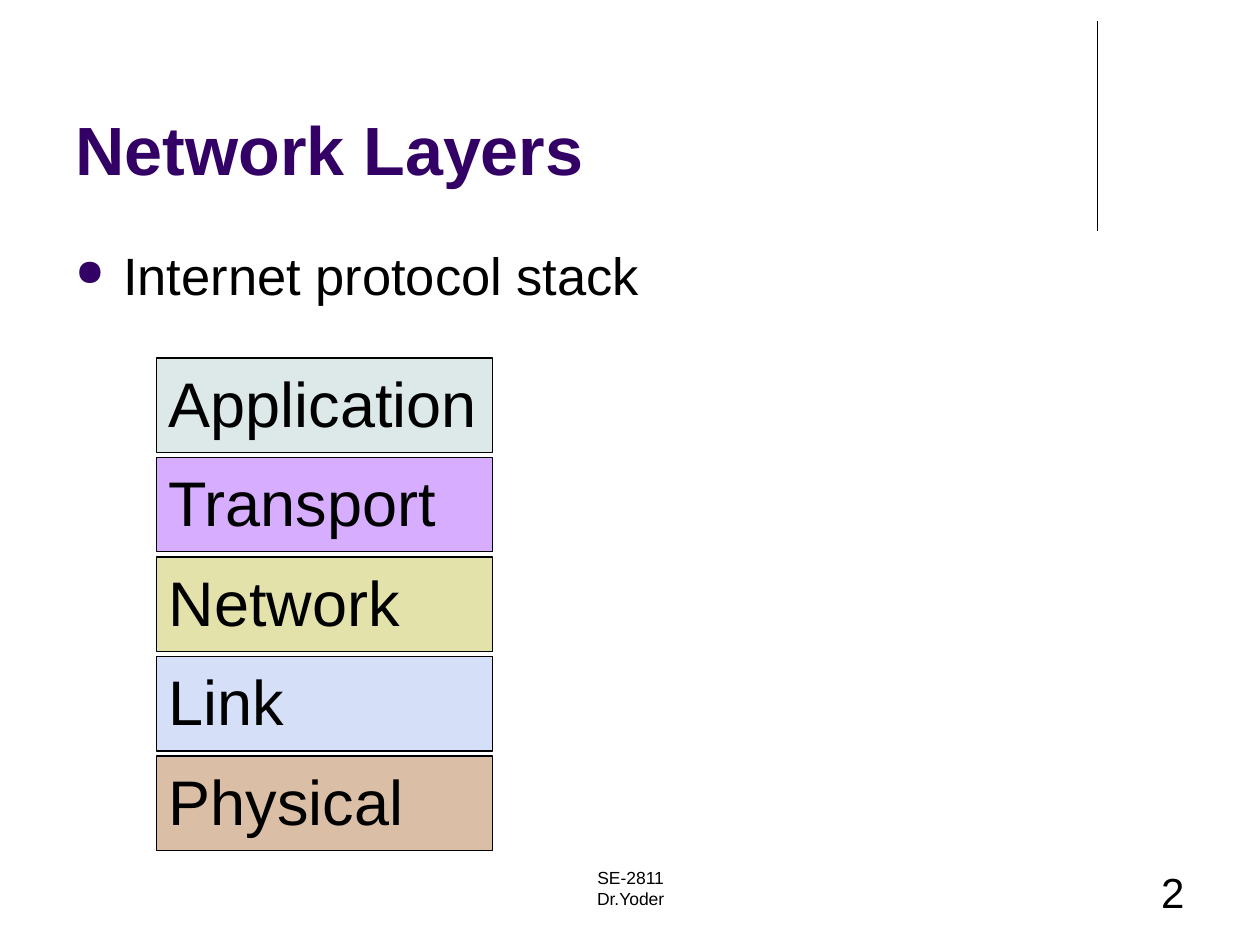
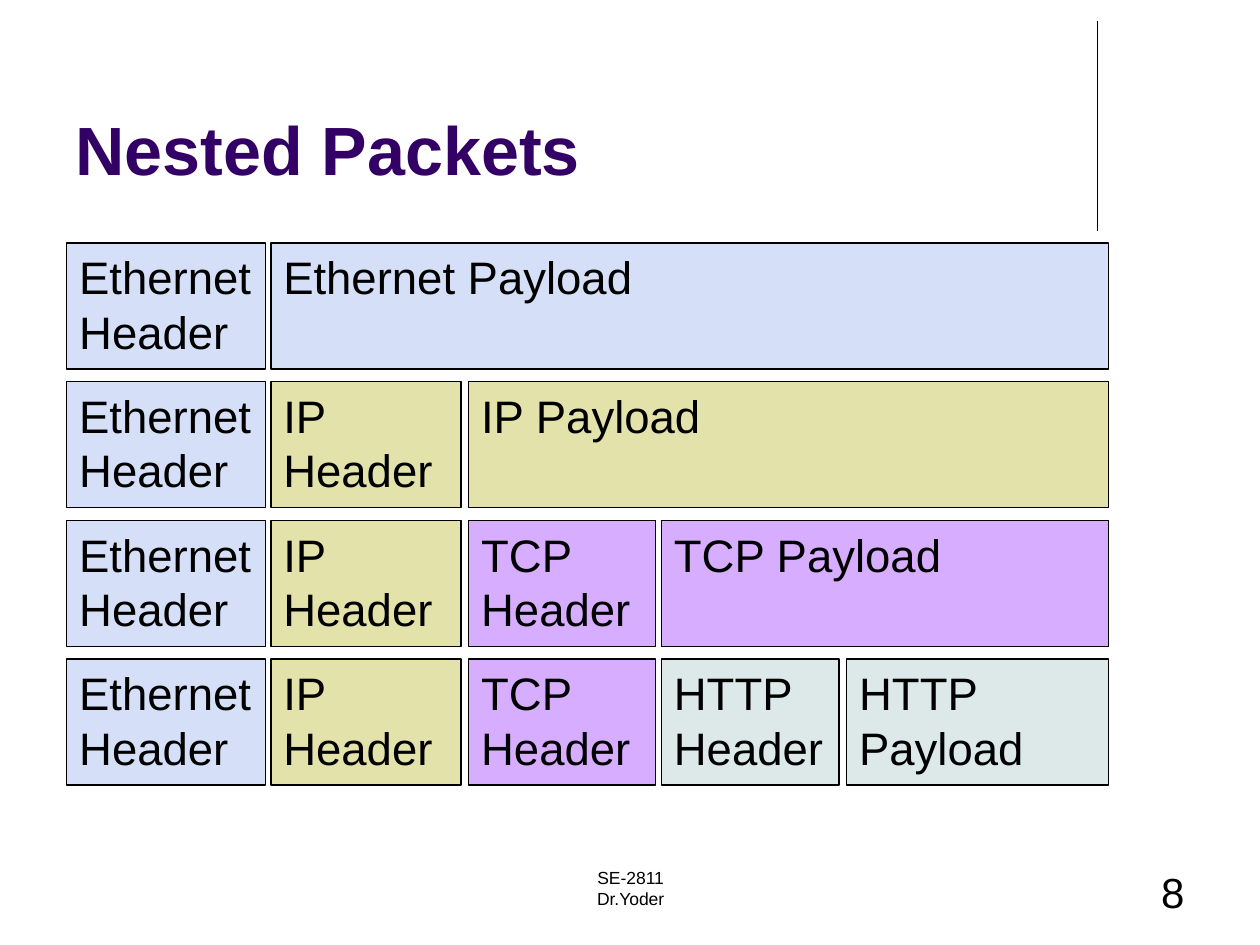
from lxml.etree import SubElement
from pptx import Presentation
from pptx.dml.color import RGBColor
from pptx.enum.shapes import MSO_CONNECTOR, MSO_SHAPE
from pptx.enum.text import MSO_ANCHOR, PP_ALIGN
from pptx.oxml.ns import qn
from pptx.util import Inches, Pt

FONT = "Arial"
BLACK = "000000"
PURPLE = "330066"
LAYER_COLORS = {
    "Application": "DDE9E9",
    "Transport": "D6ADFF",
    "Network": "E2E2AA",
    "Link": "D5DFF7",
    "Physical": "DABFA6",
}
FOOTER = ["SE-2811", "Dr.Yoder"]

PROTOCOLS = [
    ("Ethernet", "Link"),
    ("IP", "Network"),
    ("TCP", "Transport"),
    ("HTTP", "Application"),
]
COLUMN_LEFTS = [0.53, 2.15, 3.72, 5.25, 6.72]
HEADER_WIDTHS = [1.58, 1.51, 1.48, 1.41]
PAYLOAD_RIGHT = 8.8
PACKET_TOP, PACKET_STEP = 1.93, 1.1

STACK_TOP, STACK_STEP = 2.84, 0.79


def color(value):
    return RGBColor.from_string(value)


def write(shape, lines, size, fill=BLACK, bold=False, align=PP_ALIGN.LEFT,
          anchor=MSO_ANCHOR.TOP, wrap=True):
    frame = shape.text_frame
    frame.word_wrap = wrap
    frame.vertical_anchor = anchor
    frame.text = "\n".join(lines)
    for paragraph in frame.paragraphs:
        paragraph.alignment = align
        for span in paragraph.runs:
            span.font.name = FONT
            span.font.size = Pt(size)
            span.font.bold = bold
            span.font.color.rgb = color(fill)


def add_text(page, place, lines, size, **style):
    box = page.shapes.add_textbox(*map(Inches, place))
    write(box, lines, size, **style)
    return box


def add_block(page, place, lines, size, layer):
    block = page.shapes.add_shape(MSO_SHAPE.RECTANGLE, *map(Inches, place))
    block.shadow.inherit = False
    block.fill.solid()
    block.fill.fore_color.rgb = color(LAYER_COLORS[layer])
    block.line.color.rgb = color(BLACK)
    block.line.width = Pt(0.75)
    write(block, lines, size, wrap=False)


def add_bullet(paragraph):
    properties = paragraph._p.get_or_add_pPr()
    properties.set("marL", str(Inches(0.38)))
    properties.set("indent", str(-Inches(0.38)))
    bullet_color = SubElement(properties, qn("a:buClr"))
    SubElement(bullet_color, qn("a:srgbClr"), val=PURPLE)
    SubElement(properties, qn("a:buSzPct"), val="70000")
    SubElement(properties, qn("a:buChar"), char="●")


def add_page(deck, title, number):
    page = deck.slides.add_slide(deck.slide_layouts[6])
    rule = page.shapes.add_connector(
        MSO_CONNECTOR.STRAIGHT, *map(Inches, (8.71, 0.17, 8.71, 1.83)))
    rule.line.color.rgb = color(BLACK)
    rule.line.width = Pt(0.75)
    SubElement(rule._element.spPr, qn("a:effectLst"))
    add_text(page, (0.5, 0.13, 8.25, 1.42), [title], 39, fill=PURPLE,
             bold=True, anchor=MSO_ANCHOR.BOTTOM)
    add_text(page, (3.42, 6.83, 3.17, 0.5), FOOTER, 10, align=PP_ALIGN.CENTER)
    add_text(page, (7.17, 6.83, 2.33, 0.5), [str(number)], 24,
             align=PP_ALIGN.RIGHT)
    return page


def build_layers(deck):
    page = add_page(deck, "Network Layers", 2)
    body = add_text(page, (0.5, 1.88, 9, 4.82), ["Internet protocol stack"], 30)
    add_bullet(body.text_frame.paragraphs[0])
    for index, layer in enumerate(LAYER_COLORS):
        top = STACK_TOP + index * STACK_STEP
        add_block(page, (1.24, top, 2.67, 0.75), [layer], 36, layer)


def build_packets(deck):
    page = add_page(deck, "Nested Packets", 8)
    for row, (protocol, layer) in enumerate(PROTOCOLS):
        top = PACKET_TOP + row * PACKET_STEP
        for column, (name, header_layer) in enumerate(PROTOCOLS[:row + 1]):
            place = (COLUMN_LEFTS[column], top, HEADER_WIDTHS[column], 1)
            add_block(page, place, [name, "Header"], 26, header_layer)
        left = COLUMN_LEFTS[row + 1]
        innermost = row == len(PROTOCOLS) - 1
        lines = [protocol, "Payload"] if innermost else [f"{protocol} Payload"]
        add_block(page, (left, top, PAYLOAD_RIGHT - left, 1), lines, 26, layer)


def main():
    deck = Presentation()
    deck.slide_width, deck.slide_height = Inches(10), Inches(7.5)
    build_layers(deck)
    build_packets(deck)
    deck.save("out.pptx")


if __name__ == "__main__":
    main()
